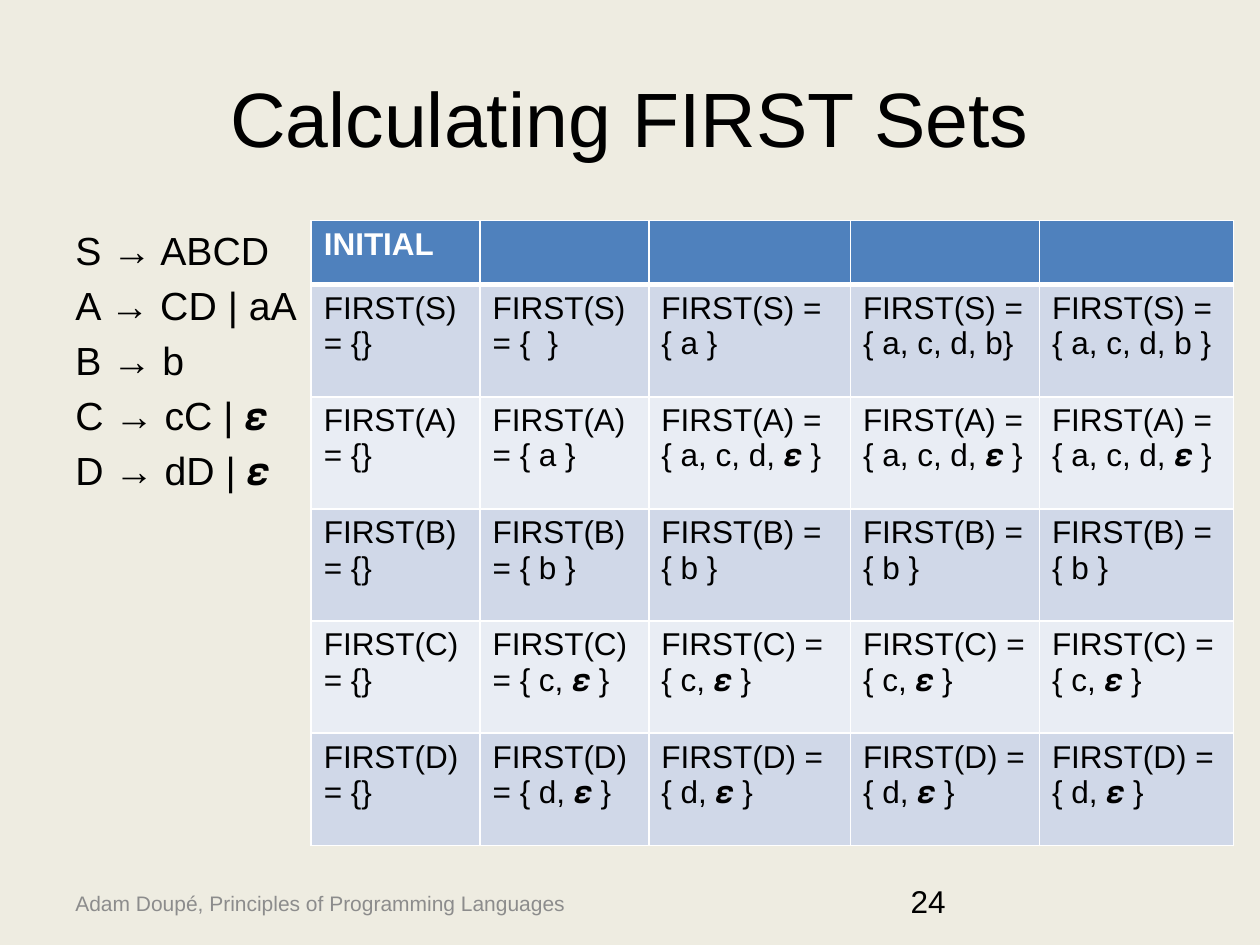
from dataclasses import dataclass
from lxml.etree import SubElement
from pptx import Presentation
from pptx.dml.color import RGBColor
from pptx.enum.text import MSO_ANCHOR, PP_ALIGN
from pptx.oxml.ns import qn
from pptx.util import Inches, Pt


@dataclass(frozen=True)
class Theme:
    font: str = "Arial"
    back: str = "EEECE1"
    ink: str = "000000"
    mute: str = "8C8C8C"
    white: str = "FFFFFF"
    head: str = "4F81BD"
    bands: tuple = ("D0D8E8", "E9EDF4")
    title: float = 44
    body: float = 22.4
    cell: float = 18
    foot: float = 12
    gap: float = 4.5
    thin: float = 1
    thick: float = 3


THEME = Theme()
RULES = ["S → ABCD", "A → CD | aA", "B → b", "C → cC | 𝜺", "D → dD | 𝜺"]
HEADS = ["INITIAL", "", "", "", ""]
SETS = {
    "S": ["{}", "{  }", "{ a }", "{ a, c, d, b}", "{ a, c, d, b }"],
    "A": ["{}", "{ a }"] + ["{ a, c, d, 𝜺 }"] * 3,
    "B": ["{}"] + ["{ b }"] * 4,
    "C": ["{}"] + ["{ c, 𝜺 }"] * 4,
    "D": ["{}"] + ["{ d, 𝜺 }"] * 4,
}
COLS = [1.34, 1.34, 1.6, 1.5, 1.54]
ROWS = [0.51] + [0.89] * len(SETS)


def apply(item, form):
    for name, value in form.items():
        setattr(item, name, value)


def style(para, size, color, bold=False):
    apply(para.font, {"name": THEME.font, "size": Pt(size), "bold": bold})
    para.font.color.rgb = RGBColor.from_string(color)


def add_text(slide, box, lines, size, color, form=None, align=PP_ALIGN.LEFT):
    frame = slide.shapes.add_textbox(*map(Inches, box)).text_frame
    apply(frame, {"word_wrap": True, **(form or {})})
    for i, line in enumerate(lines):
        para = frame.add_paragraph() if i else frame.paragraphs[0]
        apply(para, {"text": line, "alignment": align})
        if i:
            para.space_before = Pt(THEME.gap)
        style(para, size, color)


def add_edges(cell, widths):
    props = cell._tc.get_or_add_tcPr()
    for side, width in widths.items():
        line = SubElement(props, qn(f"a:ln{side}"), w=str(Pt(width)))
        fill = SubElement(line, qn("a:solidFill"))
        SubElement(fill, qn("a:srgbClr"), val=THEME.white)


def fill_cell(cell, text, fill, color, bold, widths):
    add_edges(cell, widths)
    cell.fill.solid()
    cell.fill.fore_color.rgb = RGBColor.from_string(fill)
    cell.text = text
    style(cell.text_frame.paragraphs[0], THEME.cell, color, bold)


def add_sets(slide, box):
    grid = slide.shapes.add_table(len(ROWS), len(COLS), *map(Inches, box)).table
    for col, width in zip(grid.columns, COLS):
        col.width = Inches(width)
    for row, height in zip(grid.rows, ROWS):
        row.height = Inches(height)
    body = [[f"FIRST({sym}) = {val}" for val in vals] for sym, vals in SETS.items()]
    for r, texts in enumerate([HEADS] + body):
        top = r == 0
        fill = THEME.head if top else THEME.bands[(r - 1) % 2]
        color = THEME.white if top else THEME.ink
        widths = dict.fromkeys("LRTB", THEME.thin)
        if top:
            widths["B"] = THEME.thick
        if r == 1:
            widths["T"] = THEME.thick
        for c, text in enumerate(texts):
            fill_cell(grid.cell(r, c), text, fill, color, top, widths)


def add_title(slide, box):
    form = {"vertical_anchor": MSO_ANCHOR.MIDDLE}
    add_text(slide, box, ["Calculating FIRST Sets"], THEME.title, THEME.ink,
             form, PP_ALIGN.CENTER)


def add_rules(slide, box):
    add_text(slide, box, RULES, THEME.body, THEME.ink)


def add_foot(slide, box):
    left, top, width, height = box
    form = {"vertical_anchor": MSO_ANCHOR.MIDDLE}
    add_text(slide, (left, top + 0.02, 4.26, height),
             ["Adam Doupé, Principles of Programming Languages"],
             THEME.foot, THEME.mute, form)
    add_text(slide, (left + width - 2.33, top, 2.33, height), ["24"],
             THEME.cell, THEME.ink)


def main():
    deck = Presentation()
    apply(deck, {"slide_width": Inches(10), "slide_height": Inches(7.5)})
    slide = deck.slides.add_slide(deck.slide_layouts[6])
    slide.background.fill.solid()
    slide.background.fill.fore_color.rgb = RGBColor.from_string(THEME.back)
    add_foot(slide, (0.5, 6.95, 8.96, 0.4))
    add_title(slide, (0.5, 0.3, 9, 1.25))
    add_rules(slide, (0.5, 1.75, 9, 4.95))
    add_sets(slide, (2.47, 1.75, sum(COLS), sum(ROWS)))
    deck.save("out.pptx")


if __name__ == "__main__":
    main()
